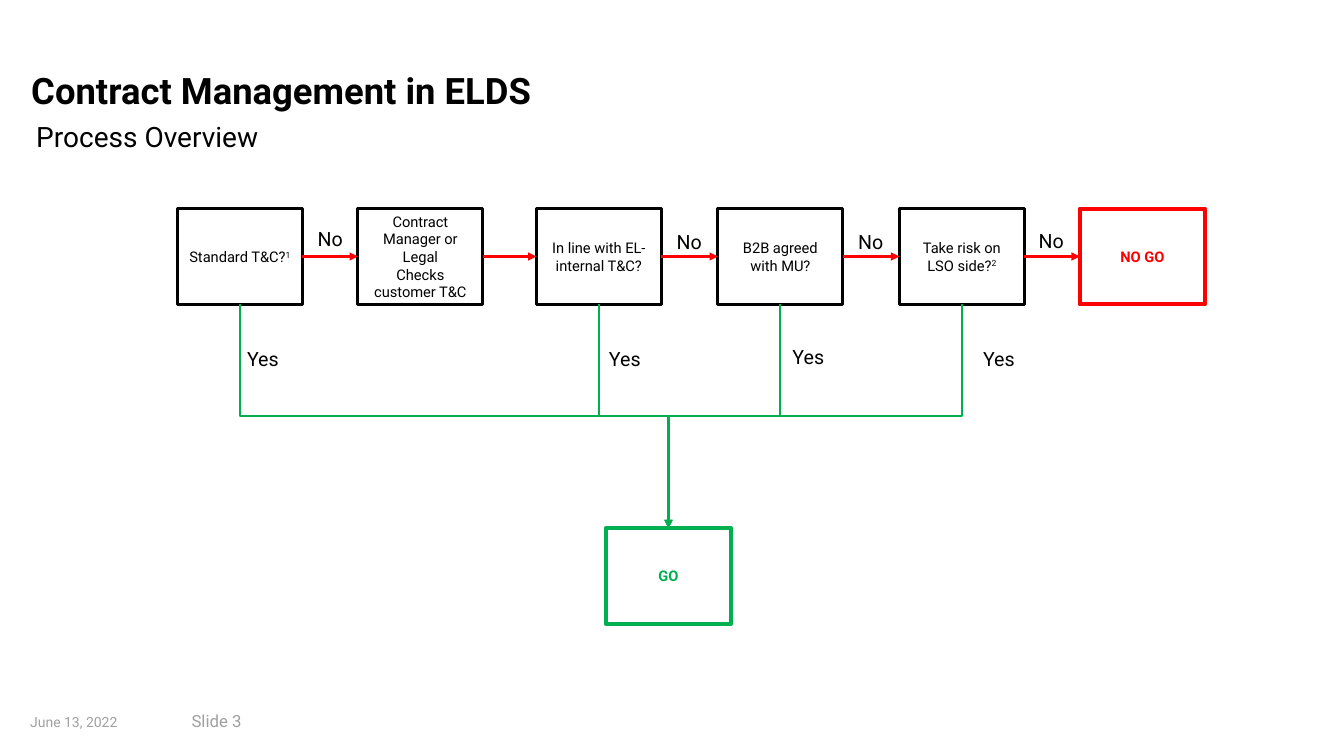
from lxml.etree import SubElement
from pptx import Presentation
from pptx.dml.color import RGBColor
from pptx.enum.shapes import MSO_CONNECTOR as Link, MSO_SHAPE as Shape
from pptx.enum.text import MSO_ANCHOR as Anchor, PP_ALIGN as Align
from pptx.oxml.ns import qn
from pptx.util import Inches, Pt

FONT = "Roboto"
COLORS = {"text": "000000", "footer": "A0A0A0", "no": "FF0000", "yes": "00B050"}
STEP_W, STEP_H = 1.24, 0.95
TOP, LEFT, BOTTOM, RIGHT = range(4)

# Left edge, paragraphs, footnote mark
STEPS = [
    (1.76, ["Standard T&C?"], "1"),
    (3.55, ["Contract Manager or Legal", "Checks customer T&C"], ""),
    (5.32, ["In line with EL-internal T&C?"], ""),
    (7.12, ["B2B agreed with MU?"], ""),
    (8.92, ["Take risk on LSO side?"], "2"),
]
# Step index: offset of the answer from the top left of the step
NO_LABELS = {0: (1.31, 0.1), 2: (1.31, 0.13), 3: (1.31, 0.13), 4: (1.3, 0.12)}
YES_LABELS = {0: (0.61, 1.29), 2: (0.64, 1.29), 3: (0.66, 1.27), 4: (0.75, 1.29)}


def color(name):
    return RGBColor.from_string(COLORS[name])


def style(paragraph, size, tone="text", bold=False):
    font = paragraph.font
    font.name, font.size, font.bold = FONT, Pt(size), bold
    font.color.rgb = color(tone)


def add_text(slide, box, text, size, tone="text", bold=False, inset=0, anchor=Anchor.TOP):
    frame = slide.shapes.add_textbox(*map(Inches, box)).text_frame
    frame.word_wrap = True
    frame.vertical_anchor = anchor
    frame.margin_left = frame.margin_right = Inches(inset)
    frame.margin_top = frame.margin_bottom = Inches(inset)
    frame.text = text
    style(frame.paragraphs[0], size, tone, bold)


def add_step(slide, left, top, lines, mark="", tone="text", weight=2, bold=False):
    step = slide.shapes.add_shape(
        Shape.RECTANGLE, Inches(left), Inches(top), Inches(STEP_W), Inches(STEP_H))
    step.shadow.inherit = False
    step.fill.background()
    step.line.color.rgb = color(tone)
    step.line.width = Pt(weight)
    frame = step.text_frame
    frame.word_wrap = True
    frame.vertical_anchor = Anchor.MIDDLE
    frame.text = "\n".join(lines)
    for paragraph in frame.paragraphs:
        paragraph.alignment = Align.CENTER
        style(paragraph, 10.5, tone, bold)
    if mark:
        footnote = frame.paragraphs[-1].add_run()
        footnote.text = mark
        footnote.font._element.set("baseline", "30000")
    return step


def add_arrow(slide, kind, start, start_side, end, end_side, tone):
    arrow = slide.shapes.add_connector(kind, 0, 0, 0, 0)
    arrow.begin_connect(start, start_side)
    arrow.end_connect(end, end_side)
    arrow.line.color.rgb = color(tone)
    arrow.line.width = Pt(1.5)
    SubElement(arrow.line._get_or_add_ln(), qn("a:tailEnd"), type="triangle")
    SubElement(arrow.element.spPr, qn("a:effectLst"))
    return arrow


def add_drop(slide, step, go):
    """Elbow from the bottom of a step to the top of GO, turned to run vertically."""
    arrow = add_arrow(slide, Link.ELBOW, step, BOTTOM, go, TOP, "yes")
    start_x, end_x = step.left + step.width // 2, go.left + go.width // 2
    start_y, end_y = step.top + step.height, go.top
    length, span = end_y - start_y, abs(end_x - start_x)
    arrow.left = (start_x + end_x - length) // 2
    arrow.top = (start_y + end_y - span) // 2
    arrow.width, arrow.height = length, span
    rightward = end_x > start_x
    xfrm = arrow.element.spPr.find(qn("a:xfrm"))
    xfrm.set("rot", "16200000" if rightward else "5400000")
    xfrm.set("flipH", "1" if rightward else "0")
    xfrm.set("flipV", "0")


def add_header(slide, left, top):
    add_text(slide, (left, top, 12.72, 0.45), "Contract Management in ELDS", 26, bold=True)
    add_text(slide, (left + 0.05, top + 0.51, 12.6, 0.55), "Process Overview", 20)


def add_footer(slide, left, top):
    add_text(slide, (left, top + 0.02, 1.27, 0.13), "June 13, 2022", 10, "footer",
             anchor=Anchor.MIDDLE)
    add_text(slide, (left + 1.6, top, 0.74, 0.15), "Slide 3", 12, "footer",
             anchor=Anchor.MIDDLE)


def add_flow(slide, top):
    # Steps and outcomes
    steps = [add_step(slide, left, top, lines, mark) for left, lines, mark in STEPS]
    no_go = add_step(slide, 10.71, top, ["NO GO"], tone="no", weight=3, bold=True)
    go = add_step(slide, 6.01, top + 3.17, ["GO"], tone="yes", weight=3, bold=True)

    # Arrows
    for index in YES_LABELS:
        add_drop(slide, steps[index], go)
    for step, following in zip(steps, steps[1:] + [no_go]):
        add_arrow(slide, Link.STRAIGHT, step, RIGHT, following, LEFT, "no")

    # Answers
    for answer, labels in (("Yes", YES_LABELS), ("No", NO_LABELS)):
        for index, (dx, dy) in labels.items():
            add_text(slide, (STEPS[index][0] + dx, top + dy, 0.85, 0.37), answer, 14,
                     inset=0.08)


def main():
    deck = Presentation()
    deck.slide_width, deck.slide_height = Inches(13.33), Inches(7.5)
    slide = deck.slides.add_slide(deck.slide_layouts[6])
    add_header(slide, 0.31, 0.68)
    add_footer(slide, 0.3, 7.08)
    add_flow(slide, 2.07)
    deck.save("out.pptx")


if __name__ == "__main__":
    main()
